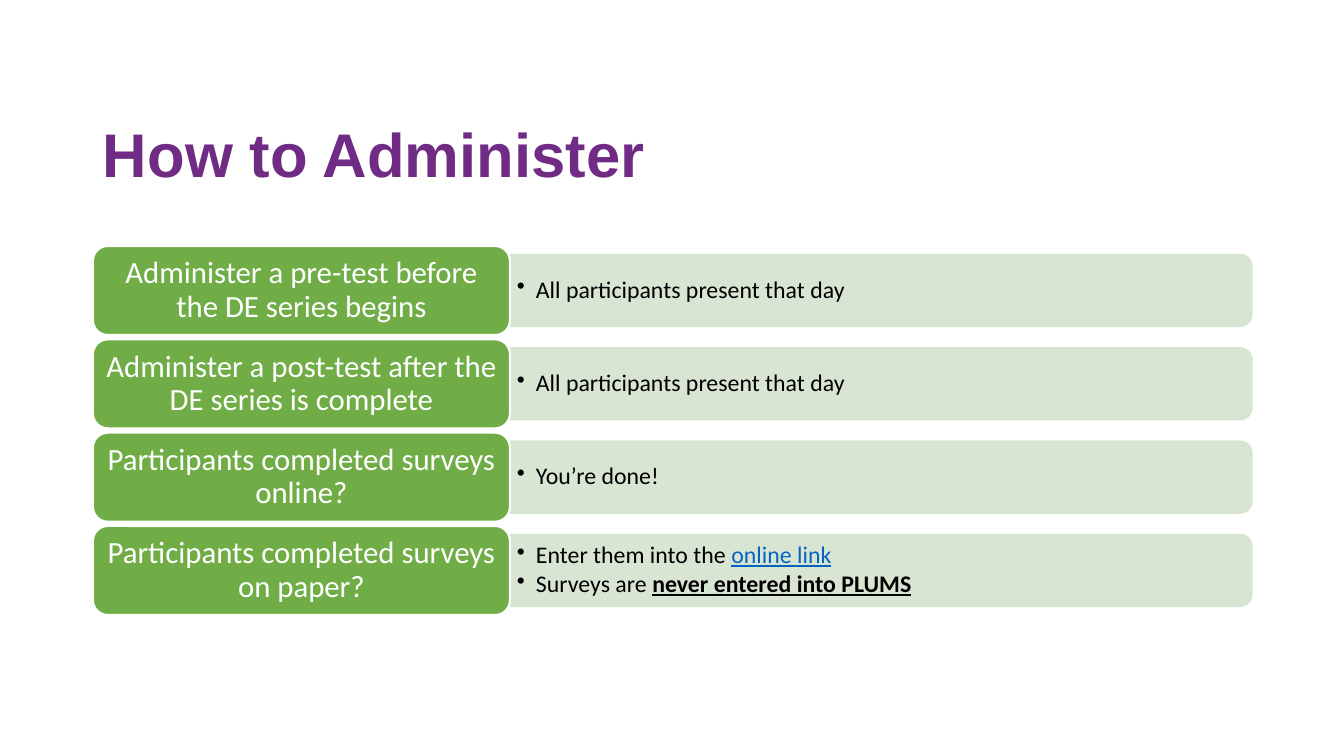
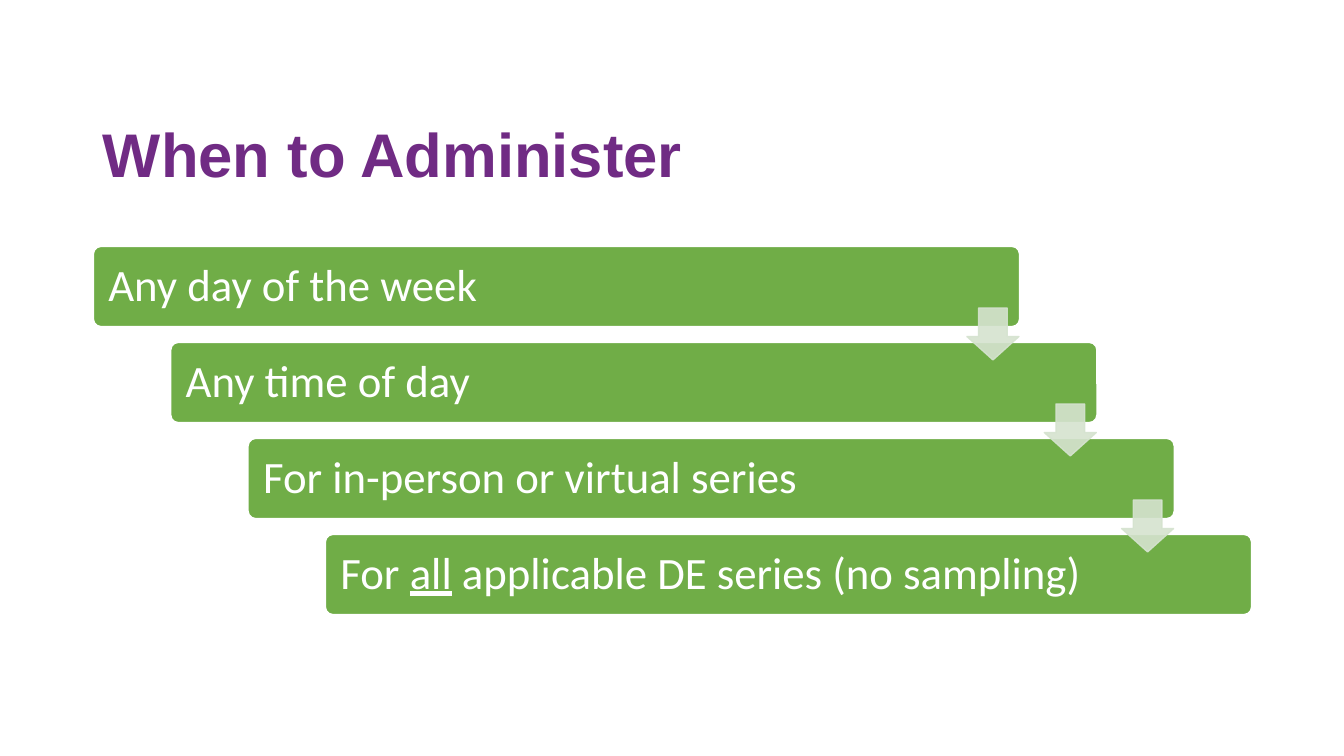
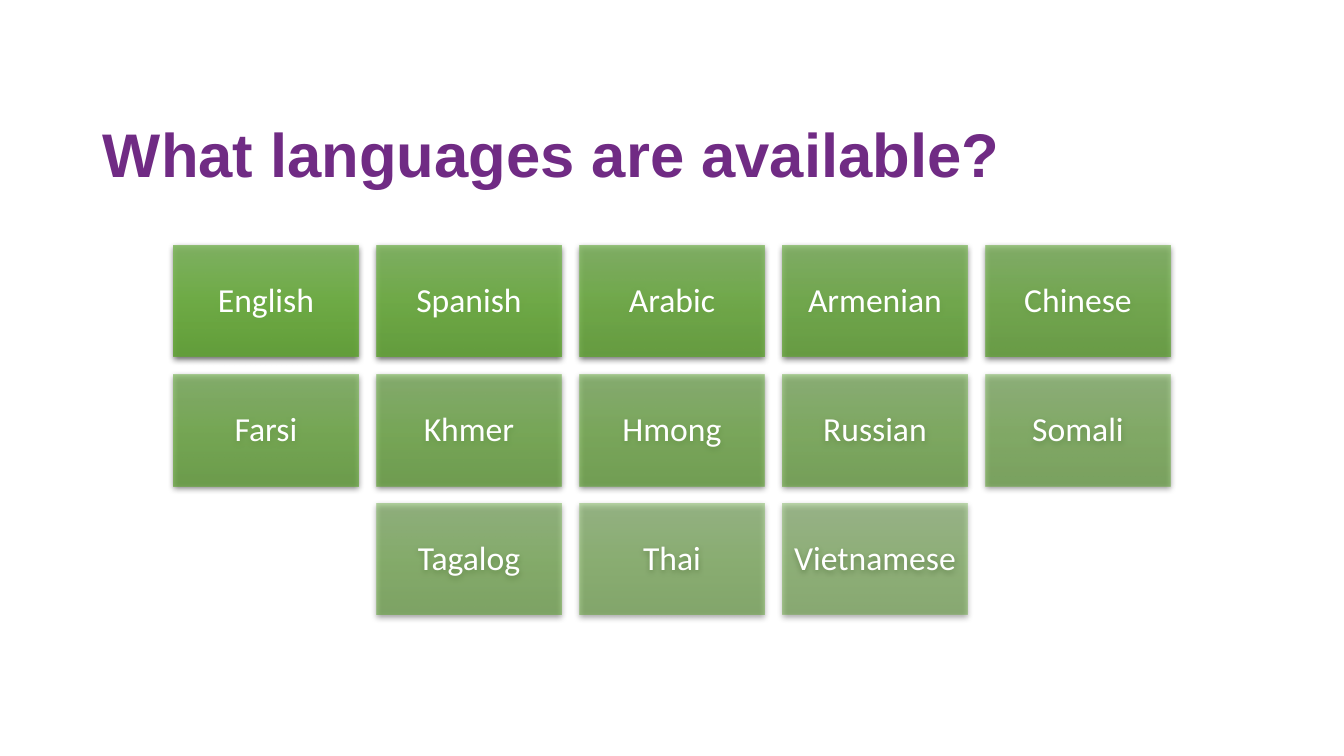
from lxml import etree
from pptx import Presentation
from pptx.dml.color import RGBColor
from pptx.enum.shapes import MSO_SHAPE
from pptx.enum.text import MSO_ANCHOR, MSO_AUTO_SIZE, PP_ALIGN
from pptx.oxml import parse_xml
from pptx.oxml.ns import nsdecls, qn
from pptx.util import Emu, Pt

ROUNDED = MSO_SHAPE.ROUNDED_RECTANGLE
ROUNDED_END = MSO_SHAPE.ROUND_2_SAME_RECTANGLE
DOWN_ARROW = MSO_SHAPE.DOWN_ARROW
RECTANGLE = MSO_SHAPE.RECTANGLE
MIDDLE = MSO_ANCHOR.MIDDLE
NO_AUTOFIT = MSO_AUTO_SIZE.NONE
LEFT, CENTER = PP_ALIGN.LEFT, PP_ALIGN.CENTER

PURPLE = RGBColor(0x70, 0x2B, 0x84)
GREEN = RGBColor(0x70, 0xAD, 0x47)
PALE_GREEN = RGBColor(0xD5, 0xE3, 0xCF)
LINK_BLUE = RGBColor(0x05, 0x63, 0xC1)
WHITE = RGBColor(0xFF, 0xFF, 0xFF)
BLACK = RGBColor(0, 0, 0)
TILE_STOPS = [
    (0, RGBColor(0x81, 0xB8, 0x61)),
    (50, RGBColor(0x6F, 0xB2, 0x42)),
    (100, RGBColor(0x62, 0xA3, 0x36)),
]

# Content: a paragraph is a list of (text, look) spans
PLAIN = {}
UNDERLINED = {"underline": True}
STRONG = {"underline": True, "bold": True}
LINK = {"underline": True, "color": LINK_BLUE}

HOW_TITLE = "How to Administer"
HOW_ROWS = [
    ("Administer a pre-test before the DE series begins",
     [[("All participants present that day", PLAIN)]]),
    ("Administer a post-test after the DE series is complete",
     [[("All participants present that day", PLAIN)]]),
    ("Participants completed surveys online?",
     [[("You’re done!", PLAIN)]]),
    ("Participants completed surveys on paper?",
     [[("Enter them into the ", PLAIN), ("online link", LINK)],
      [("Surveys are ", PLAIN), ("never entered into PLUMS", STRONG)]]),
]
WHEN_TITLE = "When to Administer"
WHEN_STEPS = [
    [("Any day of the week", PLAIN)],
    [("Any time of day", PLAIN)],
    [("For in-person or virtual series", PLAIN)],
    [("For ", PLAIN), ("all", UNDERLINED),
     (" applicable DE series (no sampling)", PLAIN)],
]
LANGUAGE_TITLE = "What languages are available?"
LANGUAGE_ROWS = [
    ["English", "Spanish", "Arabic", "Armenian", "Chinese"],
    ["Farsi", "Khmer", "Hmong", "Russian", "Somali"],
    ["Tagalog", "Thai", "Vietnamese"],
]

# Shared layout, in px
PAGE_W, PAGE_H = 1344, 756
AREA_LEFT, AREA_RIGHT = 93, 1252
AREA_TOP, AREA_BOTTOM = 246, 615
TITLE_BOX = (AREA_LEFT, 85, 1159, 146)
EMU_PER_PX = 914400 / 100.8


def px(length):
    return Emu(round(length * EMU_PER_PX))


def write(frame, paragraphs, size, color, align=LEFT, insets=(10, 5),
          font="Calibri", bold=False, bullet_indent=0):
    """Fill a text frame; insets are (horizontal, vertical)."""
    frame.word_wrap = True
    frame.auto_size = NO_AUTOFIT
    frame.vertical_anchor = MIDDLE
    frame.margin_left = frame.margin_right = px(insets[0])
    frame.margin_top = frame.margin_bottom = px(insets[1])
    for index, spans in enumerate(paragraphs):
        para = frame.add_paragraph() if index else frame.paragraphs[0]
        para.alignment = align
        para.line_spacing = 0.9
        if index:
            para.space_before = Pt(2.5)
        if bullet_indent:
            props = para._p.get_or_add_pPr()
            props.set("marL", str(px(bullet_indent)))
            props.set("indent", str(-px(bullet_indent)))
            etree.SubElement(props, qn("a:buChar")).set("char", "•")
        para.font.name, para.font.size = font, Pt(size)
        para.font.bold = bold
        para.font.color.rgb = color
        for text, look in spans:
            span = para.add_run()
            span.text = text
            if "underline" in look:
                span.font.underline = True
            if "bold" in look:
                span.font.bold = True
            if "color" in look:
                span.font.color.rgb = look["color"]


def add_block(page, kind, left, top, width, height, fill=None, line=None,
              line_width=1.0):
    block = page.shapes.add_shape(kind, px(left), px(top), px(width), px(height))
    block.shadow.inherit = False
    if fill is not None:
        block.fill.solid()
        block.fill.fore_color.rgb = fill
    if line is None:
        block.line.fill.background()
    else:
        block.line.color.rgb = line
        block.line.width = Pt(line_width)
    return block


def fade(block, percent):
    """Set the opacity of every fill and line colour of a block."""
    for color in block.element.spPr.iter(qn("a:srgbClr")):
        etree.SubElement(color, qn("a:alpha")).set("val", str(round(percent * 1000)))


def add_page(deck, title):
    page = deck.slides.add_slide(deck.slide_layouts[5])
    box = page.shapes.title
    box.left, box.top, box.width, box.height = map(px, TITLE_BOX)
    write(box.text_frame, [[(title, PLAIN)]], 44, PURPLE, font="Arial", bold=True)
    return page


def build_how(deck):
    page = add_page(deck, HOW_TITLE)
    label_w, label_h = 417, 89
    panel_h, text_h = 72, 65
    pitch = (AREA_BOTTOM - AREA_TOP - label_h) / (len(HOW_ROWS) - 1)
    panel_left = AREA_LEFT + label_w
    panel_w = AREA_RIGHT - panel_left
    for index, (label_text, details) in enumerate(HOW_ROWS):
        top = AREA_TOP + index * pitch
        middle = top + label_h / 2

        # Panel, turned so that its rounded end faces right
        panel = add_block(page, ROUNDED_END,
                          panel_left + (panel_w - panel_h) / 2, middle - panel_w / 2,
                          panel_h, panel_w, PALE_GREEN, PALE_GREEN)
        panel.rotation = 90
        fade(panel, 90)
        box = page.shapes.add_textbox(px(panel_left), px(middle - text_h / 2),
                                      px(panel_w), px(text_h))
        write(box.text_frame, details, 17, BLACK, insets=(7, 4), bullet_indent=19)

        label = add_block(page, ROUNDED, AREA_LEFT, top, label_w, label_h,
                          GREEN, WHITE, 1.5)
        write(label.text_frame, [[(label_text, PLAIN)]], 22, WHITE, CENTER, (9, 5))


def build_when(deck):
    page = add_page(deck, WHEN_TITLE)
    bar_w, bar_h, arrow_size = 927, 81, 52
    gaps = len(WHEN_STEPS) - 1
    step_x = (AREA_RIGHT - AREA_LEFT - bar_w) / gaps
    step_y = (AREA_BOTTOM - AREA_TOP - bar_h) / gaps
    corners = [(AREA_LEFT + index * step_x, AREA_TOP + index * step_y)
               for index in range(len(WHEN_STEPS))]
    for (left, top), spans in zip(corners, WHEN_STEPS):
        bar = add_block(page, ROUNDED, left, top, bar_w, bar_h, GREEN, WHITE, 1.5)
        bar.adjustments[0] = 0.1
        write(bar.text_frame, [spans], 32, WHITE, insets=(13, 13))

    # Arrows from each bar to the next
    for left, top in corners[:-1]:
        arrow = add_block(page, DOWN_ARROW, left + 874, top + 62,
                          arrow_size, arrow_size, PALE_GREEN, PALE_GREEN)
        arrow.adjustments[0], arrow.adjustments[1] = 0.55, 0.45
        fade(arrow, 90)


def style_tile(tile, opacity):
    """Give a tile its vertical gradient and soft shadow."""
    stops = "".join(f'<a:gs pos="{place * 1000}"><a:srgbClr val="{color}"/></a:gs>'
                    for place, color in TILE_STOPS)
    props = tile.element.spPr
    props.find(qn("a:ln")).addprevious(parse_xml(
        f'<a:gradFill {nsdecls("a")} rotWithShape="1"><a:gsLst>{stops}</a:gsLst>'
        '<a:lin ang="5400000" scaled="0"/></a:gradFill>'))
    fade(tile, opacity)
    props.find(qn("a:effectLst")).append(parse_xml(
        f'<a:outerShdw {nsdecls("a")} blurRad="{Pt(4.5)}" dist="{Pt(1.5)}" '
        'dir="5400000" algn="ctr" rotWithShape="0"><a:srgbClr val="000000">'
        '<a:alpha val="63000"/></a:srgbClr></a:outerShdw>'))


def build_languages(deck):
    page = add_page(deck, LANGUAGE_TITLE)
    tile_w, tile_h, gap = 185, 111, 18
    last = sum(map(len, LANGUAGE_ROWS)) - 1
    number = 0
    for row, names in enumerate(LANGUAGE_ROWS):
        row_w = len(names) * (tile_w + gap) - gap
        row_left = (PAGE_W - row_w) / 2
        for column, name in enumerate(names):
            tile = add_block(page, RECTANGLE, row_left + column * (tile_w + gap),
                             AREA_TOP + row * (tile_h + gap), tile_w, tile_h)
            style_tile(tile, 90 - 40 * number / last)
            write(tile.text_frame, [[(name, PLAIN)]], 24, WHITE, CENTER, (10, 10))
            number += 1


def main():
    deck = Presentation()
    deck.slide_width, deck.slide_height = px(PAGE_W), px(PAGE_H)
    build_how(deck)
    build_when(deck)
    build_languages(deck)
    deck.save("out.pptx")


if __name__ == "__main__":
    main()
